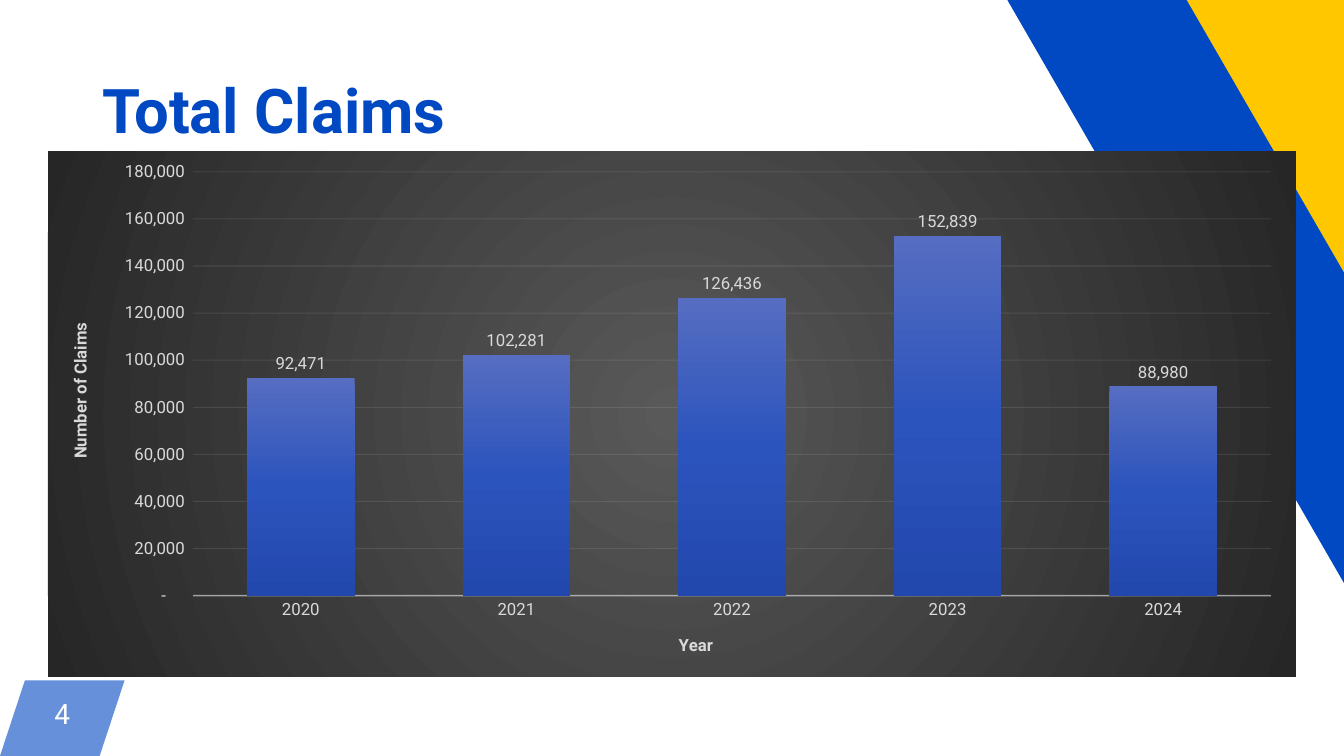
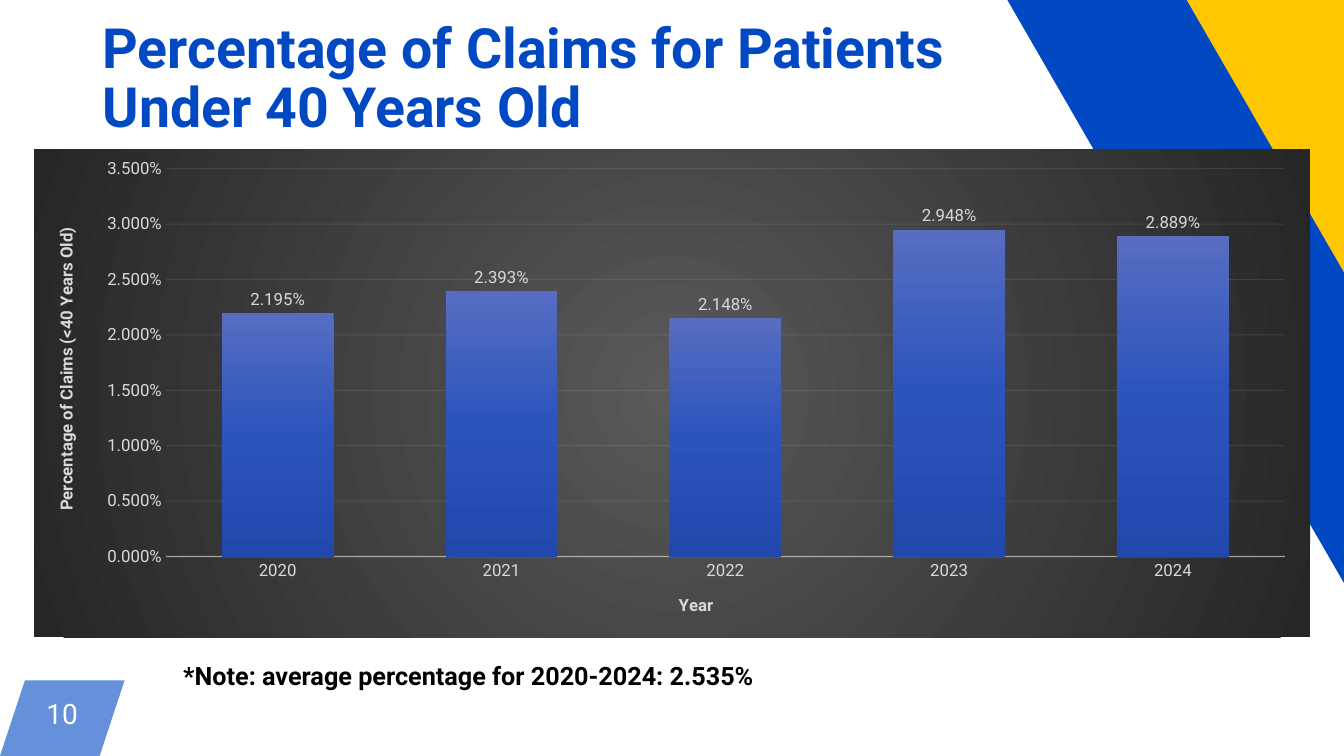
"""Build two claims slides that share a title, corner bands, page tab and column chart style."""
from dataclasses import dataclass

from pptx import Presentation
from pptx import util as u
from pptx.chart import data as cd
from pptx.dml import color
from pptx.enum import chart as ec
from pptx.enum import shapes, text
from pptx.oxml import parse_xml
from pptx.oxml.ns import nsdecls


@dataclass(frozen=True)
class Theme:
    font: str = "Roboto"
    blue: str = "0049C2"
    yellow: str = "FFC700"
    white: str = "FFFFFF"
    black: str = "000000"
    label: str = "D9D9D9"
    rule: str = "F2F2F2"
    panel: tuple = ((0, "595959"), (100, "262626"))
    column: tuple = ((0, "566DC1"), (50, "2C54BD"), (100, "2248AD"))
    title_size: float = 44
    long_title_size: float = 39.6
    page_size: float = 20
    note_size: float = 18
    chart_size: float = 12


def rgb(value):
    return color.RGBColor.from_string(value)


def set_alpha(element, query, percent):
    for clr in element.xpath(query):
        clr.append(parse_xml(f'<a:alpha {nsdecls("a")} val="{percent * 1000}"/>'))


def gradient(stops, direction):
    gs = "".join(f'<a:gs pos="{pos * 1000}"><a:srgbClr val="{c}"/></a:gs>' for pos, c in stops)
    return (f'<a:gradFill {nsdecls("a")} rotWithShape="1">'
            f"<a:gsLst>{gs}</a:gsLst>{direction}</a:gradFill>")


def set_layout(parent, index, box, place, inner=False):
    for old in parent.xpath("./c:layout"):
        parent.remove(old)
    target = '<c:layoutTarget val="inner"/>' if inner else ""
    modes = "".join(f'<c:{k}Mode val="edge"/>' for k in ("x", "y"))
    sizes = (box[2], box[3]) * 2
    values = "".join(f'<c:{k} val="{v / size:.5f}"/>' for k, v, size in zip("xywh", place, sizes))
    parent.insert(index, parse_xml(
        f'<c:layout {nsdecls("c")}><c:manualLayout>{target}{modes}{values}'
        "</c:manualLayout></c:layout>"))


class Deck:
    LINEAR_DOWN = '<a:lin ang="5400000" scaled="0"/>'
    FROM_CENTRE = ('<a:path path="circle">'
                   '<a:fillToRect l="50000" t="50000" r="50000" b="50000"/></a:path>')

    def __init__(self, theme):
        self.theme = theme
        self.prs = Presentation()
        self.prs.slide_width, self.prs.slide_height = u.Pt(960), u.Pt(540)
        self.s = None

    def slide(self, page):
        self.s = self.prs.slides.add_slide(self.prs.slide_layouts[6])
        self.page_tab(page)
        self.band((920.2, -238.8, 141.8, 706.3), 330.1, self.theme.yellow)
        self.band((851, -140.4, 110.9, 706.3), 330, self.theme.blue)

    def shape(self, kind, box, fill):
        sp = self.s.shapes.add_shape(kind, *map(u.Pt, box))
        sp.shadow.inherit = False
        sp.fill.solid()
        sp.fill.fore_color.rgb = rgb(fill)
        sp.line.fill.background()
        return sp

    def style(self, font, size, fill, bold=False):
        font.name, font.size, font.bold = self.theme.font, u.Pt(size), bold
        font.color.rgb = rgb(fill)

    def band(self, box, angle, fill):
        self.shape(shapes.MSO_SHAPE.RECTANGLE, box, fill).rotation = angle

    def page_tab(self, page):
        sp = self.shape(shapes.MSO_SHAPE.PARALLELOGRAM, (0, 486, 89, 54), self.theme.blue)
        sp.adjustments[0] = 0.33
        set_alpha(sp.element, "./p:spPr//a:srgbClr", 60)
        tf = sp.text_frame
        tf.margin_left = tf.margin_right = tf.margin_top = tf.margin_bottom = 0
        tf.word_wrap = False
        tf.vertical_anchor = text.MSO_ANCHOR.MIDDLE
        tf.text = str(page)
        p = tf.paragraphs[0]
        p.alignment = text.PP_ALIGN.CENTER
        p.line_spacing = u.Pt(17.7)
        self.style(p.runs[0].font, self.theme.page_size, self.theme.white)

    def text(self, words, box, size, fill, anchor, spacing=1.0):
        sp = self.s.shapes.add_textbox(*map(u.Pt, box))
        tf = sp.text_frame
        tf.word_wrap = True
        tf.vertical_anchor = anchor
        tf.text = words
        p = tf.paragraphs[0]
        p.line_spacing = spacing
        for r in p.runs:
            self.style(r.font, size, fill, bold=True)

    def title(self, words, top, size):
        self.text(words, (66.2, top, 828, 104.4), size, self.theme.blue,
                  text.MSO_ANCHOR.MIDDLE, 0.9)

    def note(self, words, box):
        self.text(words, box, self.theme.note_size, self.theme.black, text.MSO_ANCHOR.BOTTOM)

    def axis(self, axis, title, number_format=None):
        t = self.theme
        axis.major_tick_mark = axis.minor_tick_mark = ec.XL_TICK_MARK.NONE
        self.style(axis.tick_labels.font, t.chart_size, t.label)
        if number_format:
            axis.tick_labels.number_format = number_format
            axis.tick_labels.number_format_is_linked = False
        tf = axis.axis_title.text_frame
        tf.text = title
        self.style(tf.paragraphs[0].runs[0].font, t.chart_size, t.label, bold=True)

    def column_chart(self, box, values, value_title, axis_format, label_format,
                     top_value, step, plot, title_top):
        t = self.theme
        data = cd.CategoryChartData(number_format=label_format)
        data.categories = [str(year) for year in range(2020, 2025)]
        data.add_series("Series 1", values)
        chart = self.s.shapes.add_chart(
            ec.XL_CHART_TYPE.COLUMN_CLUSTERED, *map(u.Pt, box), data).chart
        chart.has_legend = chart.has_title = False
        self.style(chart.font, t.chart_size, t.label)

        self.axis(chart.category_axis, "Year")
        line = chart.category_axis.format.line
        line.width = u.Pt(1)
        line.color.rgb = rgb(t.rule)

        va = chart.value_axis
        self.axis(va, value_title, axis_format)
        va.minimum_scale, va.maximum_scale, va.major_unit = 0, top_value, step
        va.format.line.fill.background()
        line = va.major_gridlines.format.line
        line.width = u.Pt(0.75)
        line.color.rgb = rgb(t.rule)

        pl = chart.plots[0]
        pl.gap_width, pl.overlap, pl.vary_by_categories = 100, -24, False
        pl.has_data_labels = True
        labels = pl.data_labels
        labels.show_value = True
        labels.position = ec.XL_LABEL_POSITION.OUTSIDE_END
        labels.number_format, labels.number_format_is_linked = label_format, False
        self.style(labels.font, t.chart_size, t.label)
        series = pl.series[0]
        series.invert_if_negative = False
        series.format.line.fill.background()

        cs = chart.element
        set_alpha(cs, ".//c:catAx/c:spPr//a:srgbClr", 54)
        set_alpha(cs, ".//c:majorGridlines//a:srgbClr", 10)
        cs.xpath(".//c:ser/c:spPr")[0].insert(0, parse_xml(gradient(t.column, self.LINEAR_DOWN)))
        cs.xpath("./c:chart")[0].addnext(parse_xml(
            f'<c:spPr {nsdecls("c", "a")}>{gradient(t.panel, self.FROM_CENTRE)}'
            "<a:ln><a:noFill/></a:ln></c:spPr>"))
        body = cs.xpath(".//c:valAx/c:title//a:bodyPr")[0]
        body.set("rot", "-5400000")
        body.set("vert", "horz")
        year_place = (box[2] / 2 + 2.6, box[3] - 33)
        set_layout(cs.xpath(".//c:plotArea")[0], 0, box, plot, inner=True)
        set_layout(cs.xpath(".//c:catAx/c:title")[0], 1, box, year_place)
        set_layout(cs.xpath(".//c:valAx/c:title")[0], 1, box, (12.8, title_top))


def main():
    theme = Theme()
    deck = Deck(theme)

    deck.slide(4)
    deck.title("Total Claims", 28.8, theme.title_size)
    deck.column_chart(
        (34.2, 108.2, 891.4, 375.1), (92471, 102281, 126436, 152839, 88980),
        "Number of Claims", '_(* #,##0_);_(* \\(#,##0\\);_(* "-"??_);_(@_)', "#,##0",
        180000, 20000, (103.7, 14.6, 770, 302.7), 120)

    deck.slide(10)
    deck.title("Percentage of Claims for Patients\vUnder 40 Years Old", 5, theme.long_title_size)
    deck.note("*Note: average percentage for 2020-2024: 2.535%", (123.8, 454.6, 451.4, 42.5))
    deck.column_chart(
        (24.3, 106.6, 911.5, 348.5), (0.02195, 0.02393, 0.02148, 0.02948, 0.02889),
        "Percentage of Claims (<40 Years Old)", "0.000%", "0.000%",
        0.035, 0.005, (94.1, 13.9, 799.4, 277.1), 53.6)

    deck.prs.save("out.pptx")


if __name__ == "__main__":
    main()
